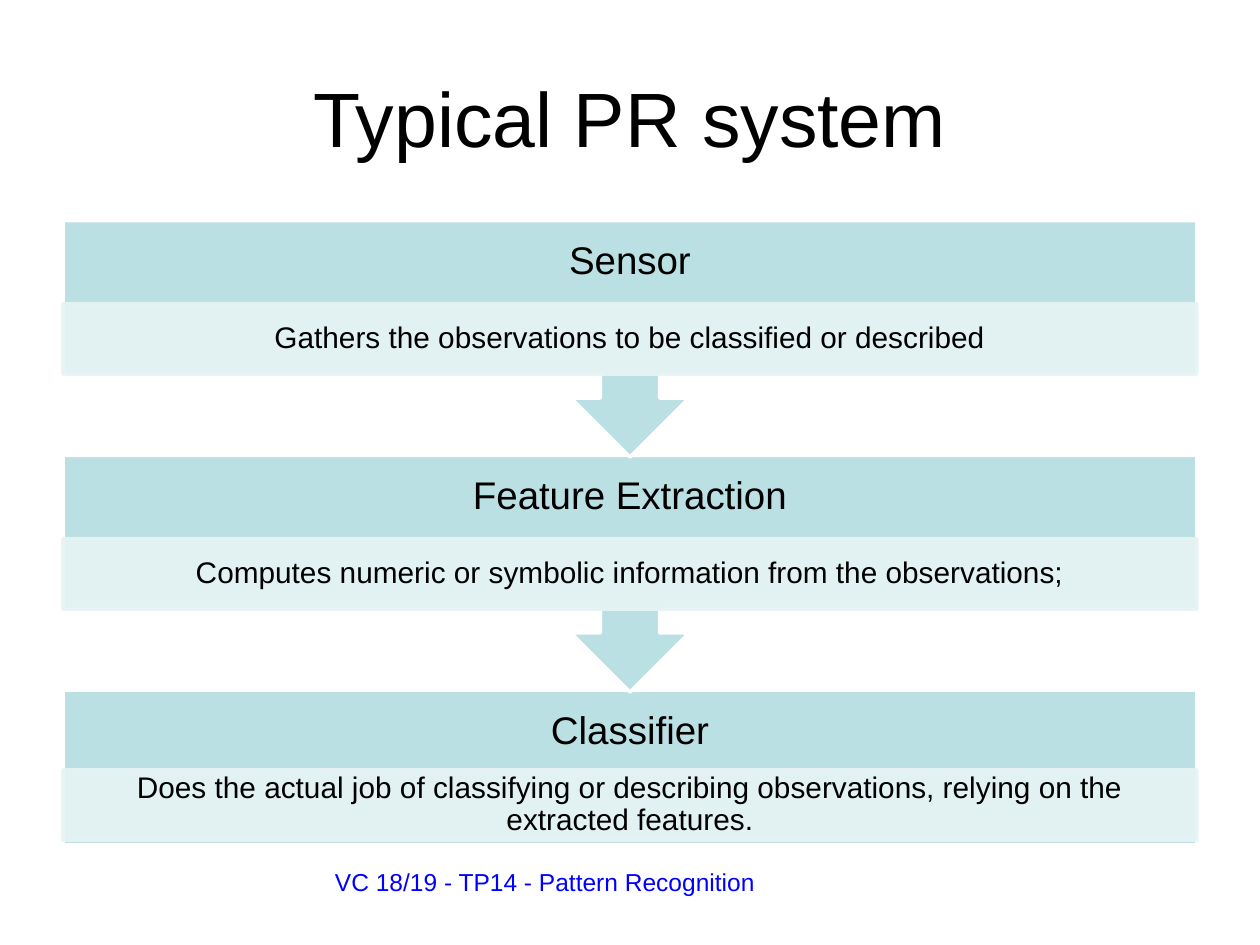
from lxml.etree import SubElement
from pptx import Presentation
from pptx.dml.color import RGBColor
from pptx.enum.shapes import MSO_SHAPE as Preset
from pptx.enum.text import MSO_ANCHOR as Anchor, PP_ALIGN as Align
from pptx.oxml.ns import qn
from pptx.util import Pt

BLACK = RGBColor(0x00, 0x00, 0x00)
WHITE = RGBColor(0xFF, 0xFF, 0xFF)
BLUE = RGBColor(0x00, 0x00, 0xFF)
TEAL = RGBColor(0xBB, 0xE0, 0xE3)
PALE_TEAL = RGBColor(0xE7, 0xF3, 0xF4)

LEFT, WIDTH = 36, 648
FIRST_TOP, PITCH = 126, 134.3
HEADING_HEIGHT, DETAIL_HEIGHT = 47.5, 40.3
CALLOUT_HEIGHT, LAST_HEIGHT = 135.2, 88

STAGES = [
    ("Sensor", "Gathers the observations to be classified or described", 47.5),
    ("Feature Extraction",
     "Computes numeric or symbolic information from the observations;", 47.5),
    ("Classifier",
     "Does the actual job of classifying or describing observations, "
     "relying on the extracted features.", 45.4),
]


def write(holder, text, size, color=BLACK, align=Align.CENTER,
          anchor=Anchor.MIDDLE, insets=(7.2, 3.6), spacing=None):
    frame = holder.text_frame
    frame.word_wrap = True
    frame.vertical_anchor = anchor
    frame.margin_left = frame.margin_right = Pt(insets[0])
    frame.margin_top = frame.margin_bottom = Pt(insets[1])
    paragraph = frame.paragraphs[0]
    paragraph.alignment = align
    paragraph.line_spacing = spacing
    run = paragraph.add_run()
    run.text = text
    run.font.name = "Arial"
    run.font.size = Pt(size)
    run.font.color.rgb = color


def add_label(slide, left, top, width, height, text, size, **style):
    label = slide.shapes.add_textbox(Pt(left), Pt(top), Pt(width), Pt(height))
    write(label, text, size, **style)


def add_block(slide, preset, top, height, fill, line):
    block = slide.shapes.add_shape(preset, Pt(LEFT), Pt(top), Pt(WIDTH), Pt(height))
    block.shadow.inherit = False
    block.fill.solid()
    block.fill.fore_color.rgb = fill
    block.line.color.rgb = line
    block.line.width = Pt(2)
    return block


def make_translucent(block, percent):
    for color in block._element.spPr.iter(qn("a:srgbClr")):
        SubElement(color, qn("a:alpha"), val=str(percent * 1000))


def add_stage(slide, index):
    heading, description, detail_offset = STAGES[index]
    top = FIRST_TOP + index * PITCH
    if index == len(STAGES) - 1:
        add_block(slide, Preset.RECTANGLE, top, LAST_HEIGHT, TEAL, WHITE)
    else:
        callout = add_block(slide, Preset.UP_ARROW_CALLOUT, top, CALLOUT_HEIGHT,
                            TEAL, WHITE)
        callout.rotation = 180
    add_label(slide, LEFT, top, WIDTH, HEADING_HEIGHT, heading, 22,
              insets=(12, 12), spacing=0.9)
    detail = add_block(slide, Preset.RECTANGLE, top + detail_offset, DETAIL_HEIGHT,
                       PALE_TEAL, PALE_TEAL)
    make_translucent(detail, 90)
    write(detail, description, 17, insets=(9.4, 1.4), spacing=0.9)


def main():
    deck = Presentation()
    deck.slide_width, deck.slide_height = Pt(720), Pt(540)
    slide = deck.slides.add_slide(deck.slide_layouts[6])
    add_label(slide, LEFT, 21.6, WIDTH, 90, "Typical PR system", 44)
    for index in reversed(range(len(STAGES))):
        add_stage(slide, index)
    add_label(slide, 184.3, 491.8, 442, 37.4, "VC 18/19 - TP14 - Pattern Recognition",
              14, color=BLUE, align=Align.LEFT, anchor=Anchor.TOP)
    deck.save("out.pptx")


if __name__ == "__main__":
    main()
